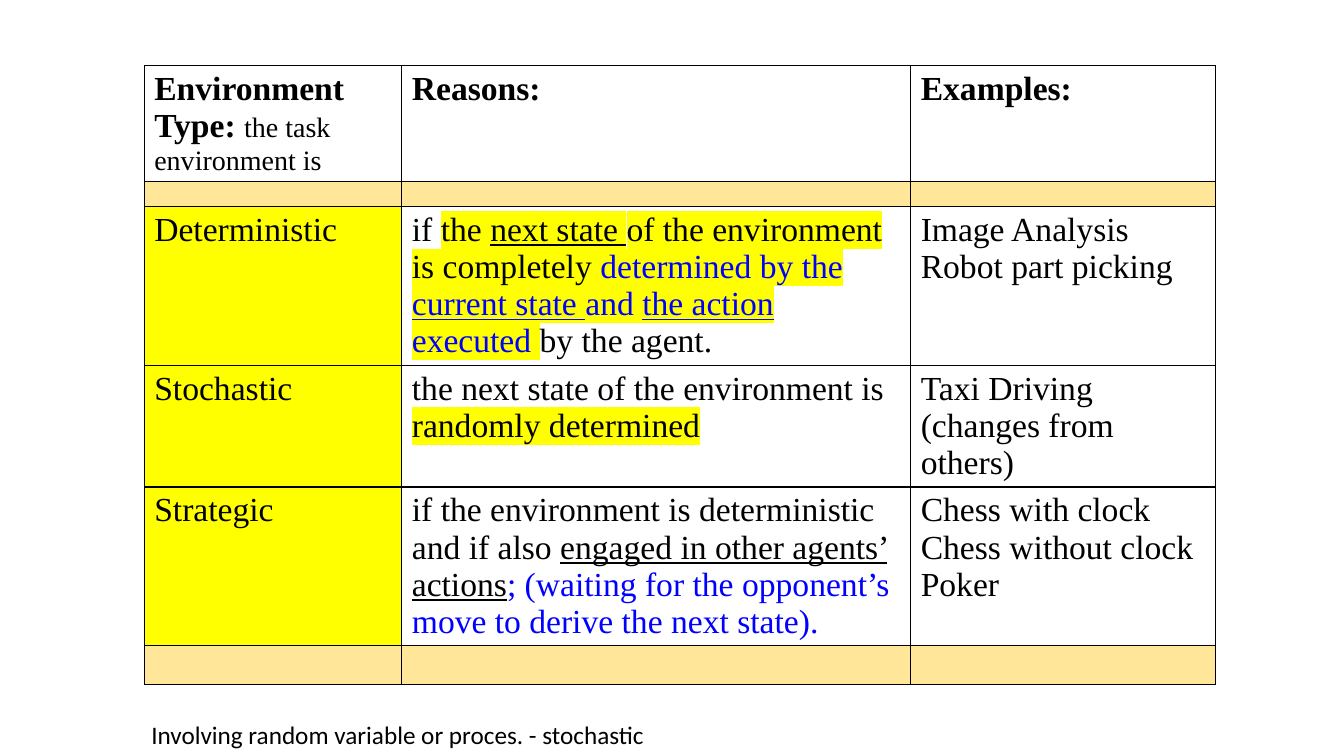
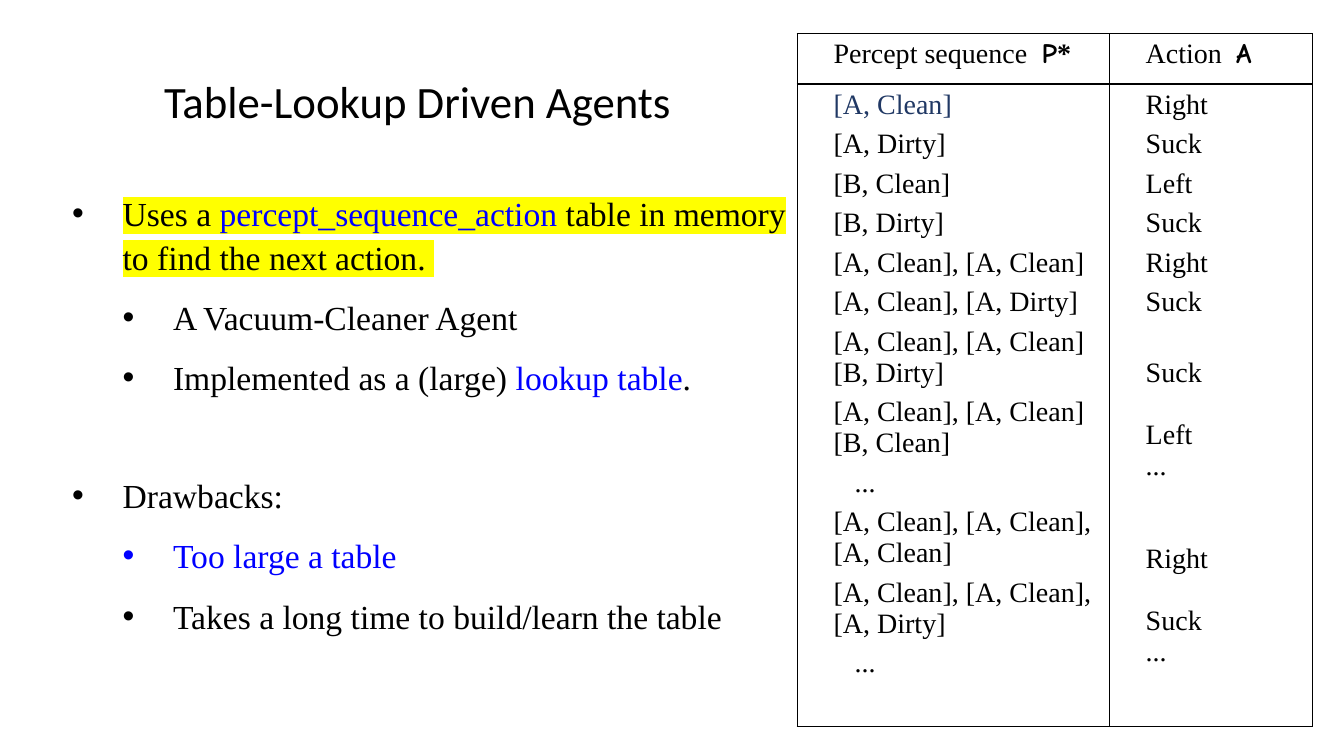
import dataclasses

import lxml.etree
import pptx
import pptx.dml.color
import pptx.enum.text
import pptx.oxml.ns
import pptx.util


@dataclasses.dataclass(frozen=True)
class Theme:
    """Colours, fonts and type sizes shared by the slides."""
    black: str = "000000"
    white: str = "FFFFFF"
    blue: str = "0000FF"
    navy: str = "203864"
    yellow: str = "FFFF00"
    sand: str = "FFE699"
    serif: str = "Times New Roman"
    sans: str = "Calibri"
    symbol: str = "Comic Neue"
    title: float = 32
    body: float = 24
    detail: float = 20
    caption: float = 18
    spacer: float = 8
    border: float = 1


THEME = Theme()
MARK = {"highlight": THEME.yellow}
BLUE = {"color": THEME.blue}
UNDER = {"underline": True}
BOLD = {"bold": True}
MARK_UNDER = MARK | UNDER
MARK_BLUE = MARK | BLUE
MARK_BLUE_UNDER = MARK_BLUE | UNDER
SYMBOL = {"font": THEME.symbol, "bold": True}


def rgb(value):
    """Turn a hex string into a colour."""
    return pptx.dml.color.RGBColor.from_string(value)


def add_xml(parent, tag, **attributes):
    """Append one drawing element to a parent."""
    return lxml.etree.SubElement(parent, pptx.oxml.ns.qn(tag), attributes)


def add_colour(parent, tag, value):
    """Append an element that holds one colour."""
    add_xml(add_xml(parent, tag), "a:srgbClr", val=value)


def write(paragraph, text, *, size=THEME.body, font=THEME.serif, color=THEME.black,
          bold=False, underline=False, highlight=None, tracking=0):
    """Add a formatted run to a paragraph."""
    run = paragraph.add_run()
    run.text = text
    run.font.size = pptx.util.Pt(size)
    run.font.bold = bold
    run.font.underline = underline
    run.font.color.rgb = rgb(color)
    properties = run.font._element
    if tracking:
        properties.set("spc", str(tracking * 100))
    if highlight:
        add_colour(properties, "a:highlight", highlight)
    run.font.name = font


def write_runs(paragraph, runs, **base):
    """Write plain strings and (text, format) pairs in one paragraph."""
    for item in [runs] if isinstance(runs, str) else runs:
        text, extra = (item, {}) if isinstance(item, str) else item
        write(paragraph, text, **(base | extra))


def paragraphs_of(frame, count):
    """Yield the first paragraph of a frame and then new ones."""
    for index in range(count):
        yield frame.add_paragraph() if index else frame.paragraphs[0]


def indent(paragraph, left, bullet=None, hang=0):
    """Set the left indent and an optional bullet."""
    properties = paragraph._p.get_or_add_pPr()
    properties.set("marL", str(pptx.util.Pt(left)))
    properties.set("indent", str(pptx.util.Pt(-hang)))
    if bullet:
        add_xml(properties, "a:buFont", typeface="Arial")
        add_xml(properties, "a:buChar", char=bullet)


def add_text_box(slide, left, top, width, height):
    """Add a wrapping text box and return its frame."""
    frame = slide.shapes.add_textbox(*map(pptx.util.Pt, (left, top, width, height))).text_frame
    frame.word_wrap = True
    frame.auto_size = pptx.enum.text.MSO_AUTO_SIZE.SHAPE_TO_FIT_TEXT
    return frame


def add_title(slide, text, left, top, width, height):
    """Place and format the title placeholder."""
    title = slide.shapes.title
    title.left, title.top, title.width, title.height = map(
        pptx.util.Pt, (left, top, width, height))
    frame = title.text_frame
    frame.auto_size = pptx.enum.text.MSO_AUTO_SIZE.NONE
    frame.vertical_anchor = pptx.enum.text.MSO_ANCHOR.TOP
    frame.paragraphs[0].alignment = pptx.enum.text.PP_ALIGN.LEFT
    write(frame.paragraphs[0], text, size=THEME.title, font=THEME.sans)


def style_cell(cell, fill):
    """Give a cell thin black borders and a fill."""
    properties = cell._tc.get_or_add_tcPr()
    for side in ("a:lnL", "a:lnR", "a:lnT", "a:lnB"):
        line = add_xml(properties, side, w=str(pptx.util.Pt(THEME.border)))
        add_colour(line, "a:solidFill", THEME.black)
    cell.fill.solid()
    cell.fill.fore_color.rgb = rgb(fill)


def add_table(slide, left, top, widths, heights):
    """Add a table without banding."""
    table = slide.shapes.add_table(len(heights), len(widths), *map(
        pptx.util.Pt, (left, top, sum(widths), sum(heights)))).table
    table.first_row = table.horz_banding = False
    for column, width in zip(table.columns, widths):
        column.width = pptx.util.Pt(width)
    for row, height in zip(table.rows, heights):
        row.height = pptx.util.Pt(height)
    return table


def add_environment_table(slide):
    """Add the table of environment types."""
    header = [
        [[("Environment Type: ", BOLD), ("the task environment is", {"size": THEME.detail})]],
        [[("Reasons:", BOLD)]],
        [[("Examples:", BOLD)]],
    ]
    deterministic = [
        ["Deterministic"],
        [["if ", ("the ", MARK), ("next state ", MARK_UNDER),
          ("of the environment is completely ", MARK), ("determined by the ", MARK_BLUE),
          ("current state ", MARK_BLUE_UNDER), ("and ", MARK_BLUE),
          ("the action ", MARK_BLUE_UNDER), ("executed ", MARK_BLUE), "by the agent."]],
        ["Image Analysis", "Robot part picking"],
    ]
    stochastic = [
        ["Stochastic"],
        [["the next state of the environment is ", ("randomly determined", MARK)]],
        ["Taxi Driving", "(changes from others)"],
    ]
    strategic = [
        ["Strategic"],
        [["if the environment is deterministic and if also ",
          ("engaged in other agents’ actions", UNDER),
          ("; (waiting for the opponent’s move to derive the next state).", BLUE)]],
        ["Chess with clock", "Chess without clock", "Poker"],
    ]
    separator = [[], [], []]
    plain, band = [THEME.white] * 3, [THEME.sand] * 3
    named = [THEME.yellow, THEME.white, THEME.white]
    rows = [(82, plain, header), (18, band, separator), (113, named, deterministic),
            (87, named, stochastic), (113, named, strategic), (28, band, separator)]
    table = add_table(slide, 103, 47, (184, 363.5, 217.5), [row[0] for row in rows])
    for row, (_, fills, contents) in zip(table.rows, rows):
        for cell, fill, lines in zip(row.cells, fills, contents):
            style_cell(cell, fill)
            for paragraph, runs in zip(paragraphs_of(cell.text_frame, len(lines)), lines):
                write_runs(paragraph, runs)
            if not lines:
                add_xml(cell.text_frame.paragraphs[0]._p, "a:endParaRPr",
                        sz=str(THEME.spacer * 100))


def add_agent_points(slide):
    """Add the two-level list about table-lookup agents."""
    step, gap, section_gap = 36, 12, 53
    points = [
        (1, 0, [("Uses a ", MARK), ("percept_sequence_action", MARK_BLUE),
                (" table in memory to find the next action. ", MARK)]),
        (2, gap, "A Vacuum-Cleaner Agent"),
        (2, gap, ["Implemented as a (large) ", ("lookup table", BLUE), "."]),
        (1, section_gap, "Drawbacks:"),
        (2, gap, [("Too large a table", BLUE)]),
        (2, gap, "Takes a long time to build/learn the table"),
    ]
    frame = add_text_box(slide, 44.5, 132, 535.5, 312)
    for paragraph, (level, before, runs) in zip(paragraphs_of(frame, len(points)), points):
        indent(paragraph, level * step, "•", step)
        paragraph.line_spacing = 1.08
        if before:
            paragraph.space_before = pptx.util.Pt(before)
        write_runs(paragraph, runs)


def fill_lookup_cell(cell, entries):
    """Write (runs, space before, space after, extra indent) entries in a cell."""
    style_cell(cell, THEME.white)
    for paragraph, (runs, before, after, extra) in zip(
            paragraphs_of(cell.text_frame, len(entries)), entries):
        indent(paragraph, 18.7 + extra)
        if before:
            paragraph.space_before = pptx.util.Pt(before)
        paragraph.space_after = pptx.util.Pt(after)
        write_runs(paragraph, runs, size=THEME.detail)


def add_lookup_table(slide):
    """Add the table from percept sequences to actions."""
    after, line, dots_indent = 6, 22.2, 15
    wide_space = (" ", {"tracking": 5})
    headers = [
        ["Percept sequence", wide_space, ("P", SYMBOL), ("*", BOLD)],
        ["Action", wide_space, ("A", SYMBOL)],
    ]
    sequences = [
        [("[A, Clean]", {"color": THEME.navy})],
        "[A, Dirty]", "[B, Clean]", "[B, Dirty]",
        "[A, Clean], [A, Clean]", "[A, Clean], [A, Dirty]",
        "[A, Clean], [A, Clean] [B, Dirty]", "[A, Clean], [A, Clean] [B, Clean]", "...",
        "[A, Clean], [A, Clean], [A, Clean]", "[A, Clean], [A, Clean], [A, Dirty]", "...",
    ]
    first_actions = ["Right", "Suck", "Left", "Suck", "Right", "Suck"]
    later_actions = [("Suck", 1), ("Left", 1), ("...", 0), ("Right", 2), ("Suck", 1), ("...", 0)]
    table = add_table(slide, 569.5, 24, (223, 145), (36, 459))
    for column, runs in enumerate(headers):
        fill_lookup_cell(table.cell(0, column), [(runs, 0, after, 0)])
    fill_lookup_cell(table.cell(1, 0), [
        (runs, 0, after, dots_indent if runs == "..." else 0) for runs in sequences])
    fill_lookup_cell(table.cell(1, 1), [
        (action, 0, after, 0) for action in first_actions] + [
        (action, skipped * line, 0, 0) for action, skipped in later_actions])


def main():
    """Build and save the presentation."""
    deck = pptx.Presentation()
    deck.slide_width, deck.slide_height = pptx.util.Pt(960), pptx.util.Pt(540)
    title_only, blank = deck.slide_layouts[5], deck.slide_layouts[6]

    environments = deck.slides.add_slide(blank)
    add_environment_table(environments)
    note = add_text_box(environments, 101, 510, 770, 29)
    write(note.paragraphs[0], "Involving random variable or proces. - stochastic",
          size=THEME.caption, font=THEME.sans)

    agents = deck.slides.add_slide(title_only)
    add_title(agents, "Table-Lookup Driven Agents", 110, 49, 469, 46)
    add_agent_points(agents)
    add_lookup_table(agents)
    deck.save("out.pptx")


if __name__ == "__main__":
    main()
